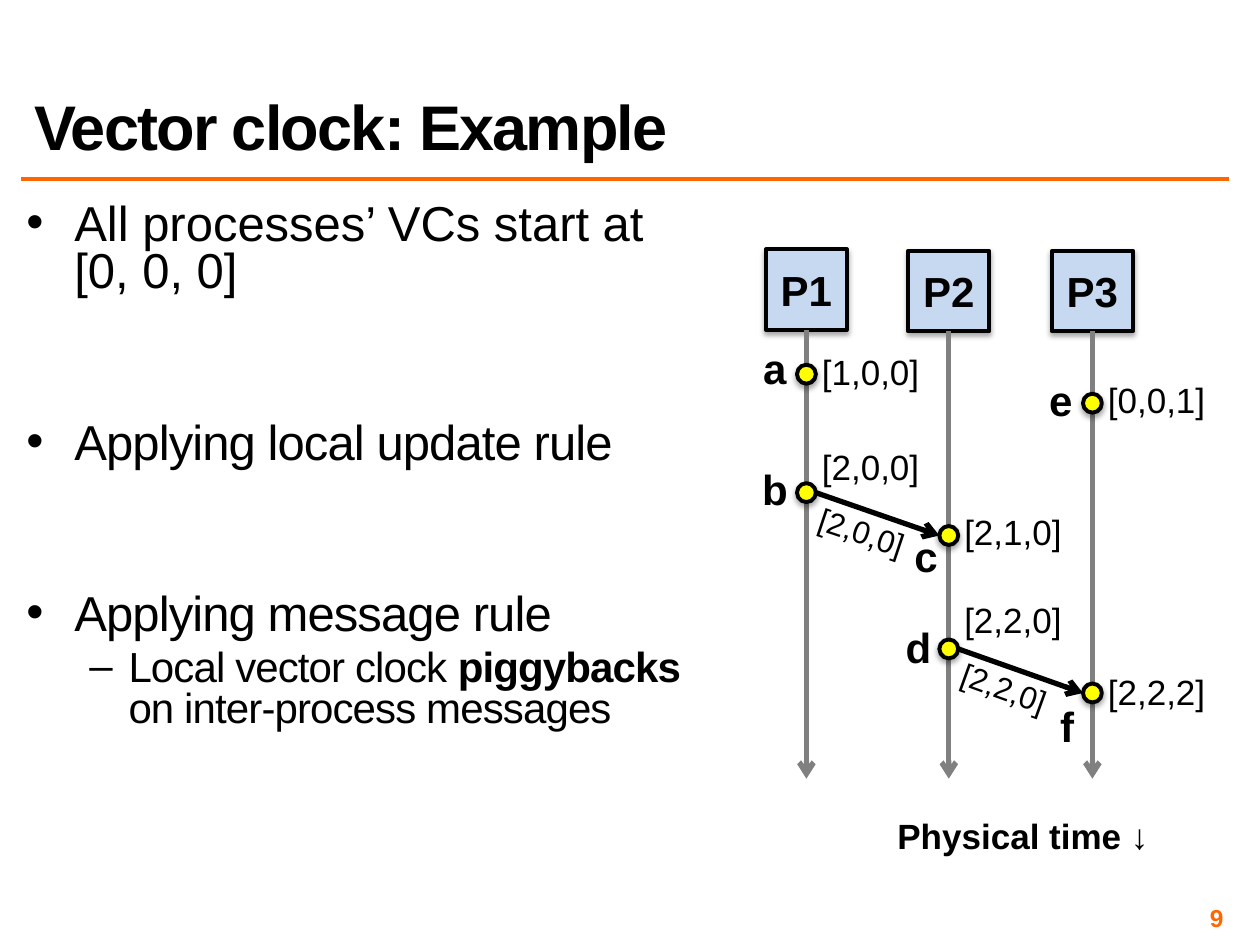
from lxml import etree
from pptx import Presentation
from pptx.dml.color import RGBColor
from pptx.enum.shapes import MSO_CONNECTOR, MSO_SHAPE
from pptx.enum.text import MSO_ANCHOR, MSO_AUTO_SIZE, PP_ALIGN
from pptx.oxml.ns import qn
from pptx.util import Inches, Pt

STRAIGHT = MSO_CONNECTOR.STRAIGHT
PROCESS, OVAL = MSO_SHAPE.FLOWCHART_PROCESS, MSO_SHAPE.OVAL
MIDDLE, BOTTOM = MSO_ANCHOR.MIDDLE, MSO_ANCHOR.BOTTOM
LEFT, CENTER, RIGHT = PP_ALIGN.LEFT, PP_ALIGN.CENTER, PP_ALIGN.RIGHT
NO_FIT, GROW = MSO_AUTO_SIZE.NONE, MSO_AUTO_SIZE.SHAPE_TO_FIT_TEXT

FONT = "Arial"
COLORS = {"ink": "000000", "accent": "FF6600", "lifeline": "808080",
          "process": "C6D9F1", "event": "FFFF00"}

BOX, DOT = 0.64, 0.15
LIFELINE_END = 6.18
CLOCK_DX = 0.51
PROCESSES = {"P1": (6.4, 1.98), "P2": (7.53, 1.99), "P3": (8.67, 1.99)}
# name: process, time, name offset, clock, clock rise
EVENTS = {
    "a": ("P1", 2.97, (-0.25, -0.05), "[1,0,0]", 0.02),
    "b": ("P1", 3.91, (-0.25, -0.03), "[2,0,0]", 0.21),
    "c": ("P2", 4.25, (-0.18, 0.16), "[2,1,0]", 0.03),
    "d": ("P2", 5.15, (-0.24, -0.02), "[2,2,0]", 0.23),
    "e": ("P3", 3.2, (-0.25, -0.03), "[0,0,1]", 0.03),
    "f": ("P3", 5.5, (-0.2, 0.26), "[2,2,2]", 0.01),
}
MESSAGES = [("b", "c", 18.5), ("d", "f", 19.8)]
BULLETS = [
    (0, 6, 0, [("All processes’ VCs start at [0, 0, 0]", False)]),
    (0, 71, -0.5, [("Applying local update rule", False)]),
    (0, 71, -0.5, [("Applying message rule", False)]),
    (1, 5.5, -0.5, [("Local vector clock ", False), ("piggybacks", True),
                    (" on inter-process messages", False)]),
]
LEVELS = [("•", 28, 0.38, -0.38), ("–", 24, 0.81, -0.31)]


def rgb(name):
    return RGBColor.from_string(COLORS[name])


def add_run(paragraph, text, size, bold=False, color="ink", spacing=0):
    run = paragraph.add_run()
    run.text = text
    run.font.name = FONT
    run.font.size = Pt(size)
    run.font.bold = bold
    run.font.color.rgb = rgb(color)
    if spacing:
        run.font._element.set("spc", str(int(spacing * 100)))


def set_insets(frame, inset):
    frame.margin_left = frame.margin_right = Inches(inset)
    frame.margin_top = frame.margin_bottom = Inches(inset)


def add_title(slide, text):
    title = slide.shapes.title
    title.left, title.top = Inches(0.17), Inches(0.17)
    title.width, title.height = Inches(9.58), Inches(1.17)
    frame = title.text_frame
    frame.auto_size = NO_FIT
    frame.vertical_anchor = BOTTOM
    paragraph = frame.paragraphs[0]
    paragraph.alignment = LEFT
    paragraph.line_spacing = 0.8
    add_run(paragraph, text, 36, True, spacing=-1)


def add_bullets(slide):
    frame = slide.shapes.add_textbox(
        Inches(0.17), Inches(1.58), Inches(5.42), Inches(5.71)).text_frame
    frame.word_wrap = True
    set_insets(frame, 0.04)
    for index, (level, gap, spacing, runs) in enumerate(BULLETS):
        paragraph = frame.add_paragraph() if index else frame.paragraphs[0]
        mark, size, margin, indent = LEVELS[level]
        paragraph.level = level
        paragraph.line_spacing = 0.8
        paragraph.space_before = Pt(gap)
        properties = paragraph._p.get_or_add_pPr()
        properties.set("marL", str(Inches(margin)))
        properties.set("indent", str(Inches(indent)))
        etree.SubElement(properties, qn("a:buFont"), typeface=FONT)
        etree.SubElement(properties, qn("a:buChar"), char=mark)
        for text, bold in runs:
            add_run(paragraph, text, size, bold, spacing=spacing)


def add_label(slide, text, x, y, size, bold=False, width=1.0, rotation=0):
    height = size * 1.2 / 72 + 0.1
    label = slide.shapes.add_textbox(
        Inches(x - width / 2), Inches(y - height / 2), Inches(width), Inches(height))
    label.rotation = rotation
    frame = label.text_frame
    frame.word_wrap = False
    frame.auto_size = GROW
    frame.paragraphs[0].alignment = CENTER
    add_run(frame.paragraphs[0], text, size, bold)


def add_line(slide, start, end, color, width, arrow=True):
    line = slide.shapes.add_connector(STRAIGHT, *map(Inches, start + end))
    line.line.color.rgb = rgb(color)
    line.line.width = Pt(width)
    if arrow:
        etree.SubElement(line.line._get_or_add_ln(), qn("a:tailEnd"), type="arrow")
    etree.SubElement(line._element.spPr, qn("a:effectLst"))
    return line


def add_node(slide, preset, x, y, size, fill):
    node = slide.shapes.add_shape(
        preset, Inches(x - size / 2), Inches(y - size / 2), Inches(size), Inches(size))
    node.fill.solid()
    node.fill.fore_color.rgb = rgb(fill)
    node.line.color.rgb = rgb("ink")
    node.line.width = Pt(2.25)
    node.shadow.inherit = False
    effects = node._element.spPr.find(qn("a:effectLst"))
    shadow = etree.SubElement(
        effects, qn("a:outerShdw"), blurRad=str(Pt(3.1)), dist=str(Pt(1.8)),
        dir="5400000", rotWithShape="0")
    shade = etree.SubElement(shadow, qn("a:srgbClr"), val=COLORS["ink"])
    etree.SubElement(shade, qn("a:alpha"), val="35000")
    return node


def add_process(slide, name, x, top):
    process = add_node(slide, PROCESS, x, top + BOX / 2, BOX, "process")
    frame = process.text_frame
    frame.vertical_anchor = MIDDLE
    frame.word_wrap = False
    frame.paragraphs[0].alignment = CENTER
    add_run(frame.paragraphs[0], name, 24, True)
    lifeline = add_line(slide, (x, top + BOX), (x, LIFELINE_END), "lifeline", 3)
    lifeline.begin_connect(process, 2)


def add_event(slide, name, process, y, offset, clock, rise):
    x = PROCESSES[process][0]
    add_node(slide, OVAL, x, y, DOT, "event")
    add_label(slide, name, x + offset[0], y + offset[1], 24, True, width=0.4)
    add_label(slide, clock, x + CLOCK_DX, y - rise, 20)


def add_message(slide, sender, receiver, angle):
    process, y, _, clock, _ = EVENTS[sender]
    x = PROCESSES[process][0]
    to_process, to_y = EVENTS[receiver][:2]
    to_x = PROCESSES[to_process][0]
    add_line(slide, (x + DOT / 2, y), (to_x - DOT / 2, to_y), "ink", 3)
    add_label(slide, clock, x + 0.44, y + 0.31, 18, width=0.9, rotation=angle)


def add_page_number(slide, number):
    frame = slide.shapes.add_textbox(
        Inches(7.42), Inches(7.17), Inches(2.33), Inches(0.23)).text_frame
    frame.word_wrap = True
    frame.vertical_anchor = MIDDLE
    set_insets(frame, 0.04)
    frame.paragraphs[0].alignment = RIGHT
    add_run(frame.paragraphs[0], number, 14, True, "accent")


def main():
    deck = Presentation()
    deck.slide_width, deck.slide_height = Inches(10), Inches(7.5)
    slide = deck.slides.add_slide(deck.slide_layouts[5])
    add_line(slide, (0.17, 1.42), (9.75, 1.42), "accent", 2, arrow=False)
    add_title(slide, "Vector clock: Example")
    add_bullets(slide)
    for name, (x, top) in PROCESSES.items():
        add_process(slide, name, x, top)
    for name, event in EVENTS.items():
        add_event(slide, name, *event)
    for message in MESSAGES:
        add_message(slide, *message)
    add_label(slide, "Physical time ↓", 8.12, 6.63, 20, True, width=2.21)
    add_page_number(slide, "9")
    deck.save("out.pptx")


if __name__ == "__main__":
    main()
